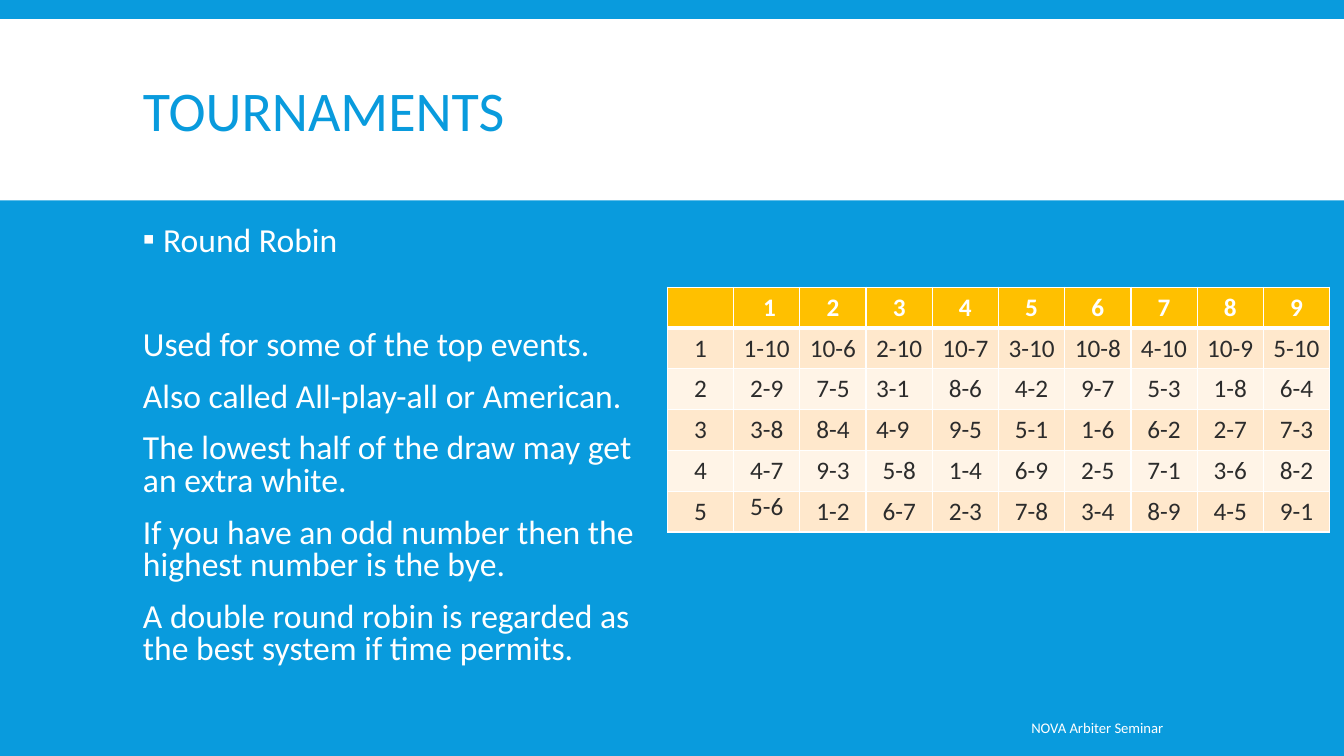
from pptx import Presentation
from pptx.dml.color import RGBColor as Rgb
from pptx.enum.shapes import MSO_SHAPE as Kind
from pptx.enum.text import MSO_ANCHOR as Anchor, PP_ALIGN as Align
from pptx.oxml.ns import qn
from pptx.util import Inches, Pt
from lxml.etree import SubElement as Sub

HUES = {
    "blue": "099BDD",
    "white": "FFFFFF",
    "gold": "FFC000",
    "peach": "FFE8CC",
    "cream": "FFF4E7",
    "ink": "2C2C2C",
}

POINTS = [
    "Round Robin",
    "Used for some of the top events.",
    "Also called All-play-all or American.",
    "The lowest half of the draw may get an extra white.",
    "If you have an odd number then the highest number is the bye.",
    "A double round robin is regarded as the best system if time permits.",
]

ROUNDS = [
    ["", " 1", "2", "3", "4", "5", "6", "7", "8", "9"],
    ["1", "1-10", "10-6", "2-10", "10-7", "3-10", "10-8", "4-10", "10-9", "5-10"],
    ["2", "2-9", "7-5", "3-1", "8-6", "4-2", "9-7", "5-3", "1-8", "6-4"],
    ["3", "3-8", "8-4", "4-9", "9-5", "5-1", "1-6", "6-2", "2-7", "7-3"],
    ["4", "4-7", "9-3", "5-8", "1-4", "6-9", "2-5", "7-1", "3-6", "8-2"],
    ["5", "5-6", "1-2", "6-7", "2-3", "7-8", "3-4", "8-9", "4-5", "9-1"],
]


class Deck:
    font = "Calibri"

    def __init__(self):
        self.file = Presentation()
        self.file.slide_width = Inches(13.33)
        self.file.slide_height = Inches(7.5)
        self.slide = self.file.slides.add_slide(self.file.slide_layouts[6])
        self.shapes = self.slide.shapes
        self.paint(self.slide.background.fill, "blue")

    def paint(self, fill, hue):
        fill.solid()
        fill.fore_color.rgb = Rgb.from_string(HUES[hue])

    def place(self, left, top, width, height):
        col = self.file.slide_width / 100
        row = self.file.slide_height / 100
        return [round(n) for n in (left * col, top * row, width * col, height * row)]

    def style(self, para, size, hue, bold=False):
        for run in para.runs:
            run.font.name = self.font
            run.font.size = Pt(size)
            run.font.bold = bold
            run.font.color.rgb = Rgb.from_string(HUES[hue])

    def band(self, box, hue):
        band = self.shapes.add_shape(Kind.RECTANGLE, *self.place(*box))
        band.shadow.inherit = False
        self.paint(band.fill, hue)
        band.line.fill.background()

    def text(self, box, lines, size, hue, anchor=Anchor.MIDDLE, align=Align.LEFT, space=1):
        frame = self.shapes.add_textbox(*self.place(*box)).text_frame
        frame.word_wrap = True
        frame.vertical_anchor = anchor
        frame.text = "\n".join(lines)
        for para in frame.paragraphs:
            para.alignment = align
            para.line_spacing = space
            self.style(para, size, hue)
        return frame.paragraphs

    def bullet(self, para, mark, hue):
        props = para._p.get_or_add_pPr()
        props.set("marL", str(Inches(0.2)))
        props.set("indent", str(Inches(-0.2)))
        Sub(Sub(props, qn("a:buClr")), qn("a:srgbClr"), val=HUES[hue])
        Sub(props, qn("a:buFont"), typeface=self.font)
        Sub(props, qn("a:buChar"), char=mark)

    def list(self, box, lines, size, hue):
        paras = self.text(box, lines, size, hue, Anchor.TOP, space=0.8)
        for para in paras:
            para.space_before = Pt(12)
            para.space_after = Pt(2)
        paras[1].space_before = Pt(49)
        self.bullet(paras[0], "▪", hue)

    def border(self, cell, row):
        props = cell._tc.get_or_add_tcPr()
        thick = {0: "B", 1: "T"}.get(row)
        for side in "LRTB":
            width = Pt(3 if side == thick else 1)
            line = Sub(props, qn("a:ln" + side), w=str(width))
            Sub(Sub(line, qn("a:solidFill")), qn("a:srgbClr"), val=HUES["white"])

    def table(self, box, data, size):
        place = self.place(*box)
        grid = self.shapes.add_table(len(data), len(data[0]), *place).table
        for y, line in enumerate(data):
            head = y == 0
            fill = "gold" if head else ("cream", "peach")[y % 2]
            for x, word in enumerate(line):
                cell = grid.cell(y, x)
                cell.text_frame.text = word
                para = cell.text_frame.paragraphs[0]
                left = x == 3 and 0 < y < 4
                para.alignment = Align.LEFT if left else Align.CENTER
                self.style(para, size, "white" if head else "ink", head)
                self.border(cell, y)
                self.paint(cell.fill, fill)
        return grid


def main():
    deck = Deck()
    deck.band((0, 2.53, 100, 24), "white")
    deck.text((9.9, 4.13, 80.27, 22), ["TOURNAMENTS"], 40, "blue", space=0.85)
    deck.list((9.9, 29.33, 39, 61.33), POINTS, 24, "white")
    grid = deck.table((49.66, 38, 49.29, 32.4), ROUNDS, 18)
    tight = grid.cell(5, 1)
    tight.margin_left = tight.margin_right = 0
    tight.margin_top = tight.margin_bottom = 0
    deck.text((45.9, 93.6, 41.4, 5.33), ["NOVA Arbiter Seminar"], 10.5, "white", align=Align.RIGHT)
    deck.file.save("out.pptx")


if __name__ == "__main__":
    main()
